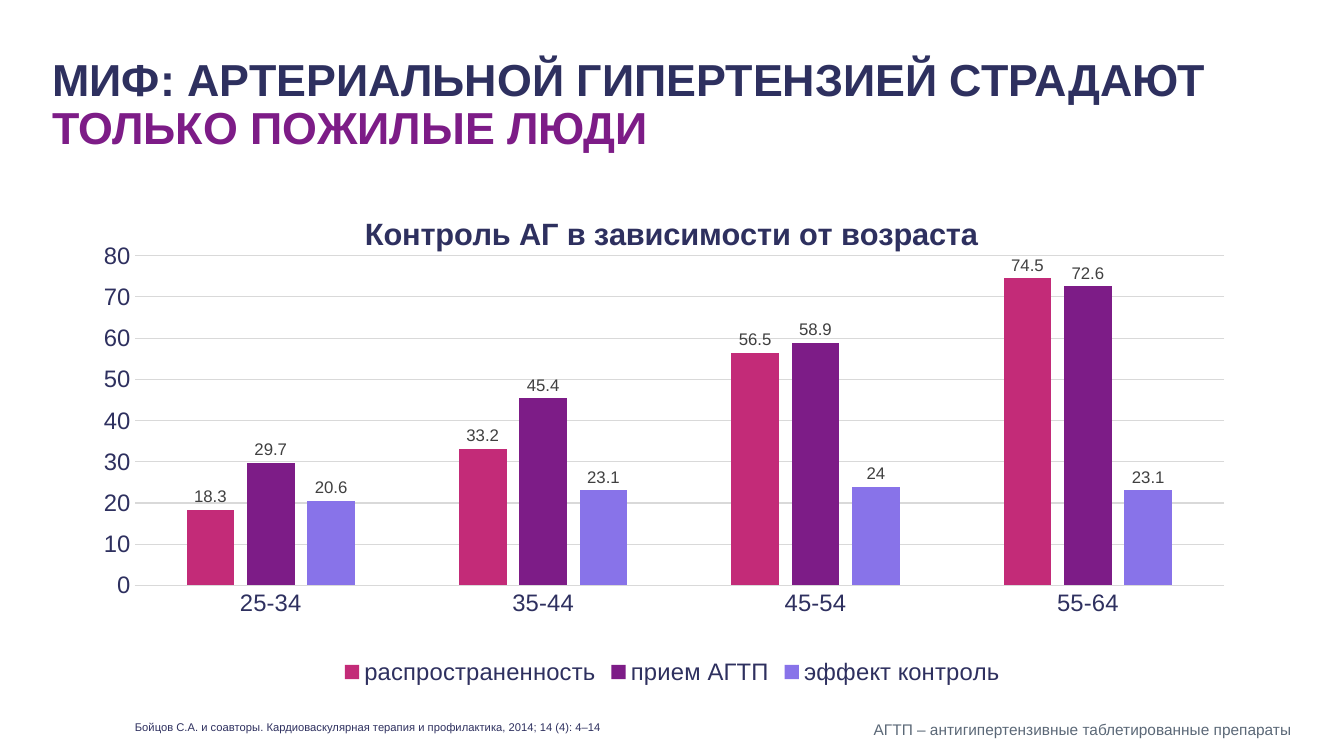
from lxml import etree
from pptx import Presentation
from pptx.chart.data import CategoryChartData
from pptx.dml.color import RGBColor
from pptx.enum.chart import XL_CHART_TYPE, XL_LABEL_POSITION, XL_LEGEND_POSITION, XL_TICK_MARK
from pptx.enum.text import MSO_ANCHOR, MSO_AUTO_SIZE, PP_ALIGN
from pptx.oxml.ns import qn
from pptx.util import Cm, Pt

COLUMNS = XL_CHART_TYPE.COLUMN_CLUSTERED
OUTSIDE = XL_LABEL_POSITION.OUTSIDE_END
BOTTOM = XL_LEGEND_POSITION.BOTTOM
NO_TICK = XL_TICK_MARK.NONE
MIDDLE = MSO_ANCHOR.MIDDLE
TOP = MSO_ANCHOR.TOP
NO_FIT = MSO_AUTO_SIZE.NONE
LEFT = PP_ALIGN.LEFT

NAVY = RGBColor(0x2E, 0x30, 0x5F)
PURPLE = RGBColor(0x7D, 0x1C, 0x87)
PINK = RGBColor(0xC3, 0x2B, 0x78)
VIOLET = RGBColor(0x88, 0x73, 0xE9)
SLATE = RGBColor(0x5B, 0x68, 0x77)
DARK = RGBColor(0x40, 0x40, 0x40)
GRID = RGBColor(0xD9, 0xD9, 0xD9)

FONT = "Arial"
AGES = ["25-34", "35-44", "45-54", "55-64"]
SERIES = [
    ("распространенность", PINK, [18.3, 33.2, 56.5, 74.5]),
    ("прием АГТП", PURPLE, [29.7, 45.4, 58.9, 72.6]),
    ("эффект контроль", VIOLET, [20.6, 23.1, 24, 23.1]),
]


def set_font(font, size, color, bold=False):
    font.name = FONT
    font.size = Pt(size)
    font.bold = bold
    font.color.rgb = color


def set_line(line):
    line.color.rgb = GRID
    line.width = Pt(0.75)


def set_frame(frame, margins, anchor):
    """Wrap the text; margins run left, top, right, bottom in cm."""
    frame.word_wrap = True
    frame.auto_size = NO_FIT
    frame.vertical_anchor = anchor
    (frame.margin_left, frame.margin_top,
     frame.margin_right, frame.margin_bottom) = map(Cm, margins)


def add_title(slide):
    title = slide.shapes.title
    title.left, title.top = Cm(1.32), Cm(1.32)
    title.width, title.height = Cm(31.19), Cm(2.69)
    set_frame(title.text_frame, (0, 0, 0, 0), MIDDLE)
    para = title.text_frame.paragraphs[0]
    para.alignment = LEFT
    para.line_spacing = 0.9
    set_font(para.font, 32, NAVY, True)
    para.add_run().text = "МИФ: АРТЕРИАЛЬНОЙ ГИПЕРТЕНЗИЕЙ СТРАДАЮТ "
    accent = para.add_run()
    accent.text = "ТОЛЬКО ПОЖИЛЫЕ ЛЮДИ"
    accent.font.color.rgb = PURPLE


def add_note(slide, text, place, size, color, margins, anchor):
    box = slide.shapes.add_textbox(*map(Cm, place))
    set_frame(box.text_frame, margins, anchor)
    para = box.text_frame.paragraphs[0]
    para.text = text
    set_font(para.font, size, color)


def set_layout(parent, index, **values):
    """Place a chart part by fractions of the chart's size."""
    for old in parent.findall(qn("c:layout")):
        parent.remove(old)
    layout = etree.Element(qn("c:layout"))
    manual = etree.SubElement(layout, qn("c:manualLayout"))
    for tag, value in values.items():
        etree.SubElement(manual, qn("c:" + tag)).set("val", str(value))
    parent.insert(index, layout)


def style_axes(chart):
    for axis in (chart.category_axis, chart.value_axis):
        axis.major_tick_mark = axis.minor_tick_mark = NO_TICK
        set_font(axis.tick_labels.font, 17, NAVY)
    set_line(chart.category_axis.format.line)
    values = chart.value_axis
    values.minimum_scale, values.maximum_scale = 0, 80
    values.major_unit = 10
    values.format.line.fill.background()
    set_line(values.major_gridlines.format.line)


def style_bars(plot):
    plot.gap_width = 219
    plot.overlap = -27
    plot.vary_by_categories = False
    for series, (_, color, _) in zip(plot.series, SERIES):
        series.format.fill.solid()
        series.format.fill.fore_color.rgb = color
        series.invert_if_negative = False
        labels = series.data_labels
        labels.show_value = True
        labels.position = OUTSIDE
        set_font(labels.font, 12, DARK)


def add_chart(slide):
    data = CategoryChartData()
    data.categories = AGES
    for name, _, values in SERIES:
        data.add_series(name, values)
    place = map(Cm, (2.34, 4.75, 29.21, 12.65))
    chart = slide.shapes.add_chart(COLUMNS, *place, data).chart
    chart.font.name = FONT
    chart.font.size = Pt(10)

    para = chart.chart_title.text_frame.paragraphs[0]
    para.text = "Контроль АГ в зависимости от возраста"
    set_font(para.font, 22, NAVY, True)
    chart.chart_title.include_in_layout = False
    set_layout(chart.chart_title._element, 1,
               xMode="edge", yMode="edge", x=0.23, y=0.04)

    chart.has_legend = True
    chart.legend.position = BOTTOM
    chart.legend.include_in_layout = False
    set_font(chart.legend.font, 17, NAVY)

    style_axes(chart)
    style_bars(chart.plots[0])
    area = chart._chartSpace.chart.plotArea
    set_layout(area, 0, layoutTarget="inner", xMode="edge", yMode="edge",
               x=0.036, y=0.134, w=0.94, h=0.657)


def main():
    deck = Presentation()
    deck.slide_width, deck.slide_height = Cm(33.87), Cm(19.05)
    slide = deck.slides.add_slide(deck.slide_layouts[5])
    add_title(slide)
    add_chart(slide)
    add_note(slide, "Бойцов С.А. и соавторы. Кардиоваскулярная терапия "
             "и профилактика, 2014; 14 (4): 4–14",
             (3.4, 18.01, 21.69, 0.61), 8, NAVY, (0, 0.13, 0.25, 0.13), MIDDLE)
    add_note(slide, "АГТП – антигипертензивные таблетированные препараты",
             (21.77, 18.01, 12.1, 0.74), 11, SLATE,
             (0.25, 0.13, 0.1, 0.13), TOP)
    deck.save("out.pptx")


if __name__ == "__main__":
    main()
